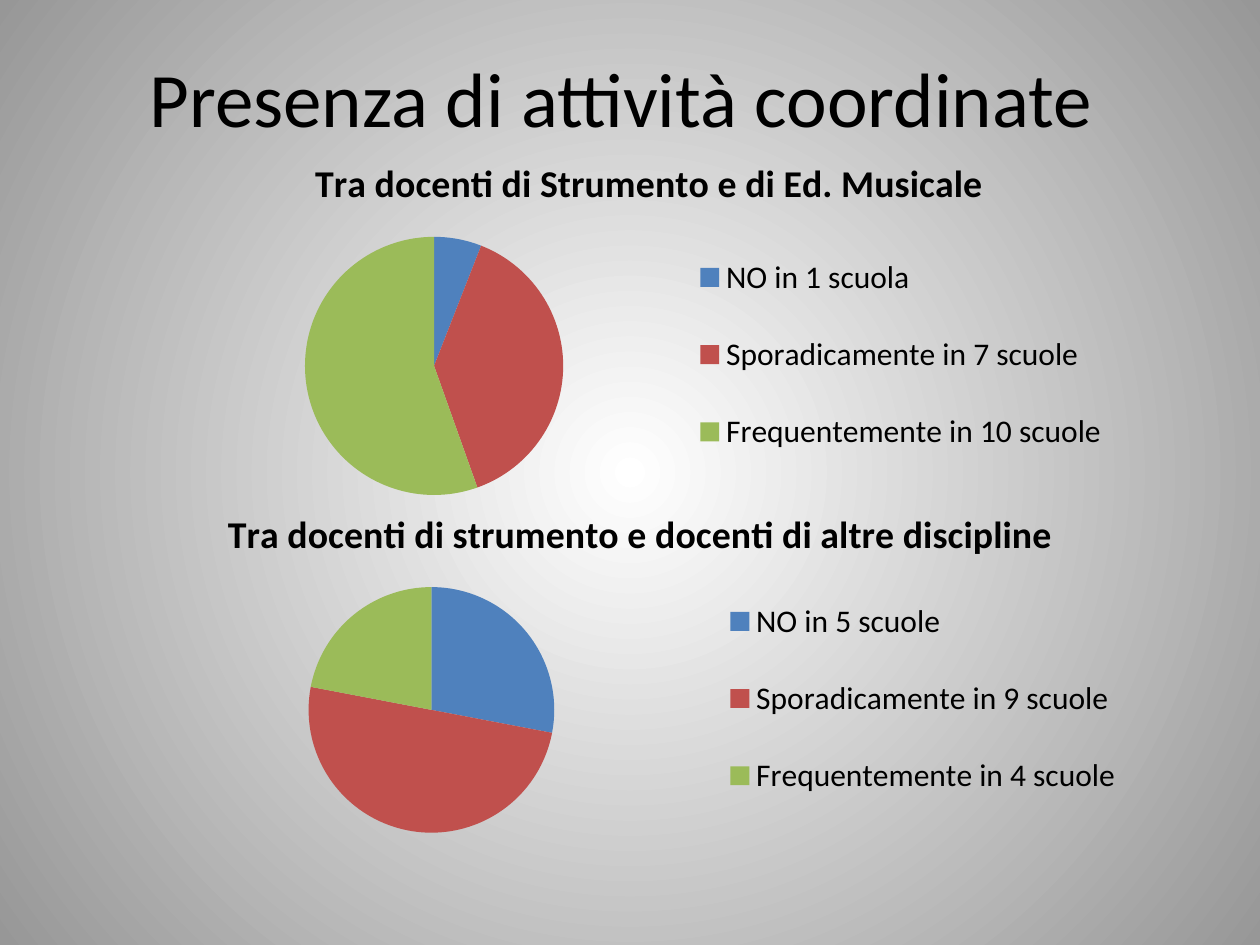
from lxml import etree
from pptx import Presentation
from pptx.chart.data import CategoryChartData
from pptx.dml.color import RGBColor
from pptx.enum.chart import XL_CHART_TYPE, XL_LEGEND_POSITION
from pptx.enum.text import MSO_ANCHOR, PP_ALIGN
from pptx.oxml import parse_xml
from pptx.oxml.ns import nsdecls, qn
from pptx.util import Inches, Pt

PIE = XL_CHART_TYPE.PIE
LEGEND_RIGHT = XL_LEGEND_POSITION.RIGHT
CENTER = PP_ALIGN.CENTER
MIDDLE = MSO_ANCHOR.MIDDLE

FONT = "Calibri"
COLORS = {
    "text": "000000",
    "glow": "FFFFFF",
    "edge": "979797",
    "no": "4F81BD",
    "sometimes": "C0504D",
    "often": "9BBB59",
}
ANSWERS = ("no", "sometimes", "often")


def rgb(name):
    """Return the named colour."""
    return RGBColor.from_string(COLORS[name])


def style_font(font, size, bold=False):
    """Apply the common typeface and colour to a font."""
    font.name = FONT
    font.size = Pt(size)
    font.bold = bold
    font.color.rgb = rgb("text")


def paint_background(slide):
    """Fill the background with a circular gradient from the centre."""
    fill = slide.background.fill
    fill.gradient()
    for stop, position, color in zip(fill.gradient_stops, (0, 1), ("glow", "edge")):
        stop.position = position
        stop.color.rgb = rgb(color)
    gradient = slide.element.xpath("p:cSld/p:bg/p:bgPr/a:gradFill")[0]
    gradient.remove(gradient.find(qn("a:lin")))
    circle = etree.SubElement(gradient, qn("a:path"), path="circle")
    etree.SubElement(circle, qn("a:fillToRect"), l="50000", t="50000", r="50000", b="50000")


def add_heading(slide, text):
    """Add the centred slide heading."""
    heading = slide.shapes.add_textbox(Inches(0.5), Inches(0.3), Inches(9), Inches(0.93))
    frame = heading.text_frame
    frame.word_wrap = True
    frame.vertical_anchor = MIDDLE
    paragraph = frame.paragraphs[0]
    paragraph.alignment = CENTER
    run = paragraph.add_run()
    run.text = text
    style_font(run.font, 44)


def place(part, index, area, chart_area, target=""):
    """Fix a chart part at a slide area given in inches."""
    left, top, width, height = chart_area
    fractions = {
        "x": (area[0] - left) / width,
        "y": (area[1] - top) / height,
        "w": area[2] / width,
        "h": area[3] / height,
    }
    values = "".join(f'<c:{key} val="{value:.4f}"/>' for key, value in fractions.items())
    for old in part.findall(qn("c:layout")):
        part.remove(old)
    part.insert(index, parse_xml(
        f'<c:layout {nsdecls("c")}><c:manualLayout>{target}'
        f'<c:xMode val="edge"/><c:yMode val="edge"/>{values}'
        f'</c:manualLayout></c:layout>'))


def add_pie(slide, title, shares, area, pie_area, legend_area):
    """Add a titled pie with its legend on the right."""
    data = CategoryChartData()
    data.categories = list(shares)
    data.add_series(title, list(shares.values()))
    chart = slide.shapes.add_chart(PIE, *map(Inches, area), data).chart
    style_font(chart.font, 18)

    chart.has_title = True
    run = chart.chart_title.text_frame.paragraphs[0].add_run()
    run.text = title
    style_font(run.font, 21.6, bold=True)

    chart.has_legend = True
    chart.legend.position = LEGEND_RIGHT
    chart.legend.include_in_layout = False
    style_font(chart.legend.font, 18)

    plot = chart.plots[0]
    plot.vary_by_categories = True
    for index, answer in enumerate(ANSWERS):
        fill = plot.series[0].points[index].format.fill
        fill.solid()
        fill.fore_color.rgb = rgb(answer)

    plot_part = chart.element.xpath("c:chart/c:plotArea")[0]
    legend_part = chart.element.xpath("c:chart/c:legend")[0]
    place(plot_part, 0, pie_area, area, '<c:layoutTarget val="inner"/>')
    place(legend_part, 1, legend_area, area)


def main():
    """Build and save the slide."""
    deck = Presentation()
    deck.slide_width, deck.slide_height = Inches(10), Inches(7.5)
    slide = deck.slides.add_slide(deck.slide_layouts[6])
    paint_background(slide)
    add_heading(slide, "Presenza di attività coordinate ")
    add_pie(
        slide,
        "Tra docenti di Strumento e di Ed. Musicale",
        {"NO in 1 scuola": 6, "Sporadicamente in 7 scuole": 39,
         "Frequentemente in 10 scuole": 56},
        area=(1.14, 1.07, 8.03, 2.99),
        pie_area=(2.42, 1.88, 2.05, 2.05),
        legend_area=(5.45, 1.74, 3.4, 2.15),
    )
    add_pie(
        slide,
        "Tra docenti di strumento e docenti di altre discipline",
        {"NO in 5 scuole": 28, "Sporadicamente in 9 scuole": 50,
         "Frequentemente in 4 scuole": 22},
        area=(0.91, 3.86, 8.35, 2.89),
        pie_area=(2.45, 4.66, 1.95, 1.95),
        legend_area=(5.7, 4.47, 3.25, 2.15),
    )
    deck.save("out.pptx")


if __name__ == "__main__":
    main()
